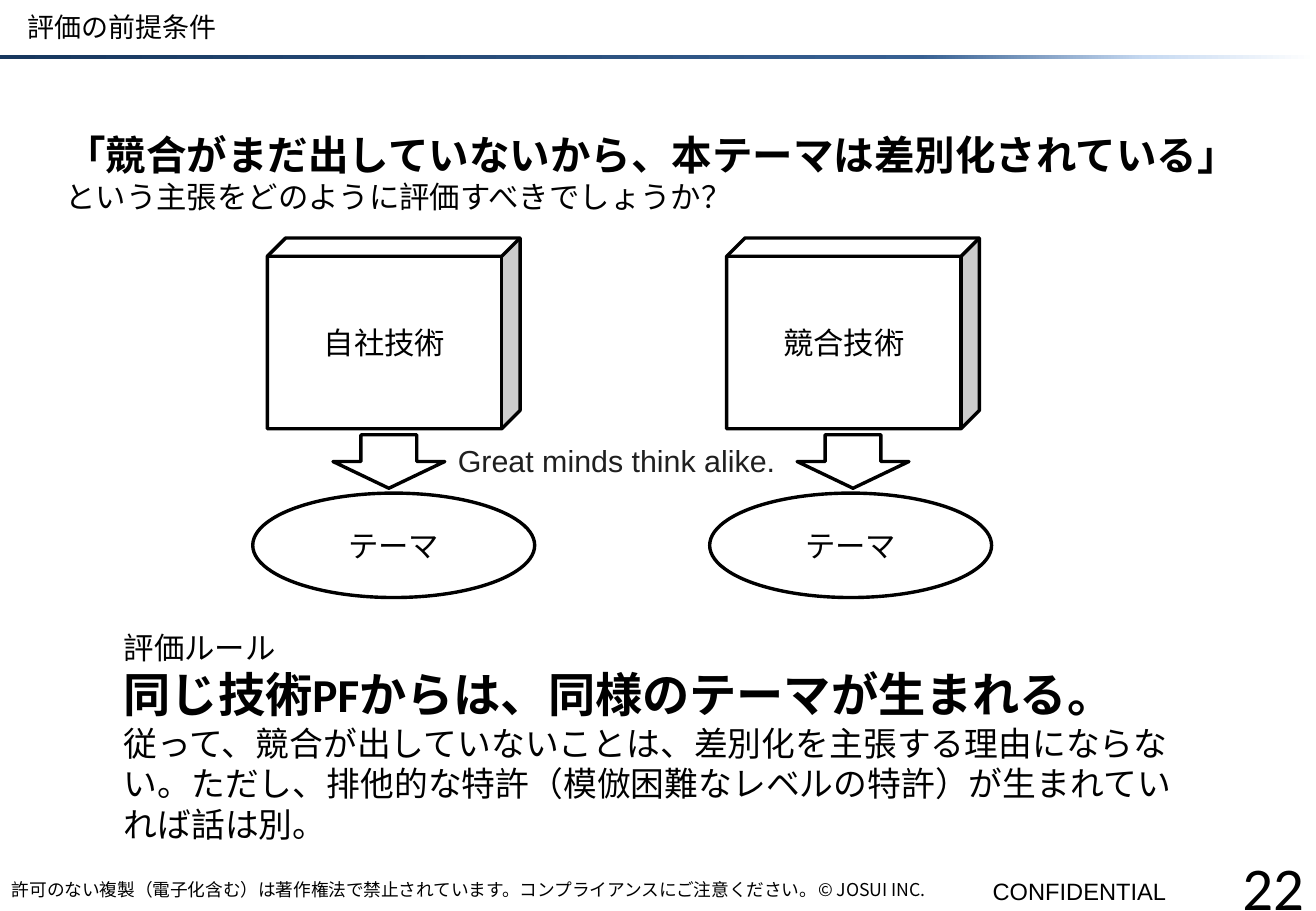
from copy import deepcopy

from lxml.etree import SubElement
from pptx import Presentation
from pptx.dml.color import RGBColor
from pptx.enum.shapes import MSO_SHAPE
from pptx.enum.text import MSO_ANCHOR, PP_ALIGN
from pptx.oxml.ns import qn
from pptx.util import Inches, Pt

CJK = "Noto Sans CJK JP"
LEFT, MID, RIGHT = PP_ALIGN.LEFT, PP_ALIGN.CENTER, PP_ALIGN.RIGHT
TOP, CORE = MSO_ANCHOR.TOP, MSO_ANCHOR.MIDDLE


def color(code):
    return RGBColor.from_string(code)


def write(frame, lines, face="Calibri", tint="000000", align=LEFT, anchor=TOP, wrap=True):
    """Fill a text frame with one paragraph per (text, size, bold) line."""
    frame.word_wrap = wrap
    frame.vertical_anchor = anchor
    for i, (text, size, bold) in enumerate(lines):
        para = frame.add_paragraph() if i else frame.paragraphs[0]
        para.alignment = align
        run = para.add_run()
        run.text = text
        font = run.font
        font.size, font.bold, font.name = Pt(size), bold, face
        font.color.rgb = color(tint)
        SubElement(run._r.get_or_add_rPr(), qn("a:ea"), typeface=CJK)


deck = Presentation()
deck.slide_width, deck.slide_height = Inches(10.83), Inches(7.5)
slide = deck.slides.add_slide(deck.slide_layouts[5])
shapes = slide.shapes

# Header bar
bar = shapes.add_shape(MSO_SHAPE.RECTANGLE, 0, Inches(0.45), deck.slide_width, Inches(0.04))
bar.shadow.inherit = False
bar.line.fill.background()
bar.fill.gradient()
bar.fill.gradient_angle = 0
stops = bar.fill.gradient_stops
first = stops[0]._gs
for _ in range(2):
    first.addnext(deepcopy(first))
shades = [(0, "17375E"), (0.7, "376092"), (0.87, "C6D9F1"), (1, "FFFFFF")]
for stop, (place, code) in zip(bar.fill.gradient_stops, shades):
    stop.position = place
    stop.color.rgb = color(code)

# Title
title = shapes.title
title.left, title.top = Inches(0.13), 0
title.width, title.height = Inches(9.24), Inches(0.44)
write(title.text_frame, [("評価の前提条件", 16, False)], CJK, anchor=CORE)

# Technology, arrow and theme, one column for each company
parts = [
    (MSO_SHAPE.CUBE, 2.2, 1.96, 2.08, 1.57, 3.78, ("自社技術", "競合技術")),
    (MSO_SHAPE.DOWN_ARROW, 2.74, 3.58, 0.92, 0.44, 3.82, ()),
    (MSO_SHAPE.OVAL, 2.08, 4.06, 2.32, 0.86, 3.76, ("テーマ", "テーマ")),
]
for kind, x, y, w, h, step, names in parts:
    for col in range(2):
        part = shapes.add_shape(kind, Inches(x + col * step), Inches(y), Inches(w), Inches(h))
        part.shadow.inherit = False
        part.fill.solid()
        part.fill.fore_color.rgb = color("FFFFFF")
        part.line.color.rgb = color("000000")
        part.line.width = Pt(2)
        if kind == MSO_SHAPE.CUBE:
            part.adjustments[0] = 0.096
        if names:
            write(part.text_frame, [(names[col], 18, False)], align=MID, anchor=CORE)

# Claim, rule, quote and footer
claim = [
    ("「競合がまだ出していないから、本テーマは差別化されている」", 24, True),
    ("という主張をどのように評価すべきでしょうか？", 18, False),
]
rule = [
    ("評価ルール", 18, False),
    ("同じ技術PFからは、同様のテーマが生まれる。", 28, True),
    ("従って、競合が出していないことは、差別化を主張する理由にならない。"
     "ただし、排他的な特許（模倣困難なレベルの特許）が生まれていれば話は別。", 20, False),
]
quote = [("Great minds think alike.", 18, False)]
notice = [("許可のない複製（電子化含む）は著作権法で禁止されています。"
           "コンプライアンスにご注意ください。© JOSUI INC.", 10.5, False)]
texts = [
    (0.44, 1.02, 9.96, 0.81, claim, {"wrap": False}),
    (0.92, 5.13, 8.98, 1.88, rule, {}),
    (3.67, 3.59, 3.07, 0.4, quote, {"face": "Arial", "tint": "1F1F1F"}),
    (0, 7.15, 9.75, 0.35, notice, {"face": CJK, "anchor": CORE}),
    (8.07, 7.17, 1.68, 0.34, [("CONFIDENTIAL", 14, False)], {"face": "Arial", "wrap": False}),
    (9.46, 7.12, 1.37, 0.35, [("22", 36, False)], {"align": RIGHT, "anchor": CORE}),
]
for x, y, w, h, lines, style in texts:
    box = shapes.add_textbox(Inches(x), Inches(y), Inches(w), Inches(h))
    write(box.text_frame, lines, **style)

deck.save("out.pptx")
